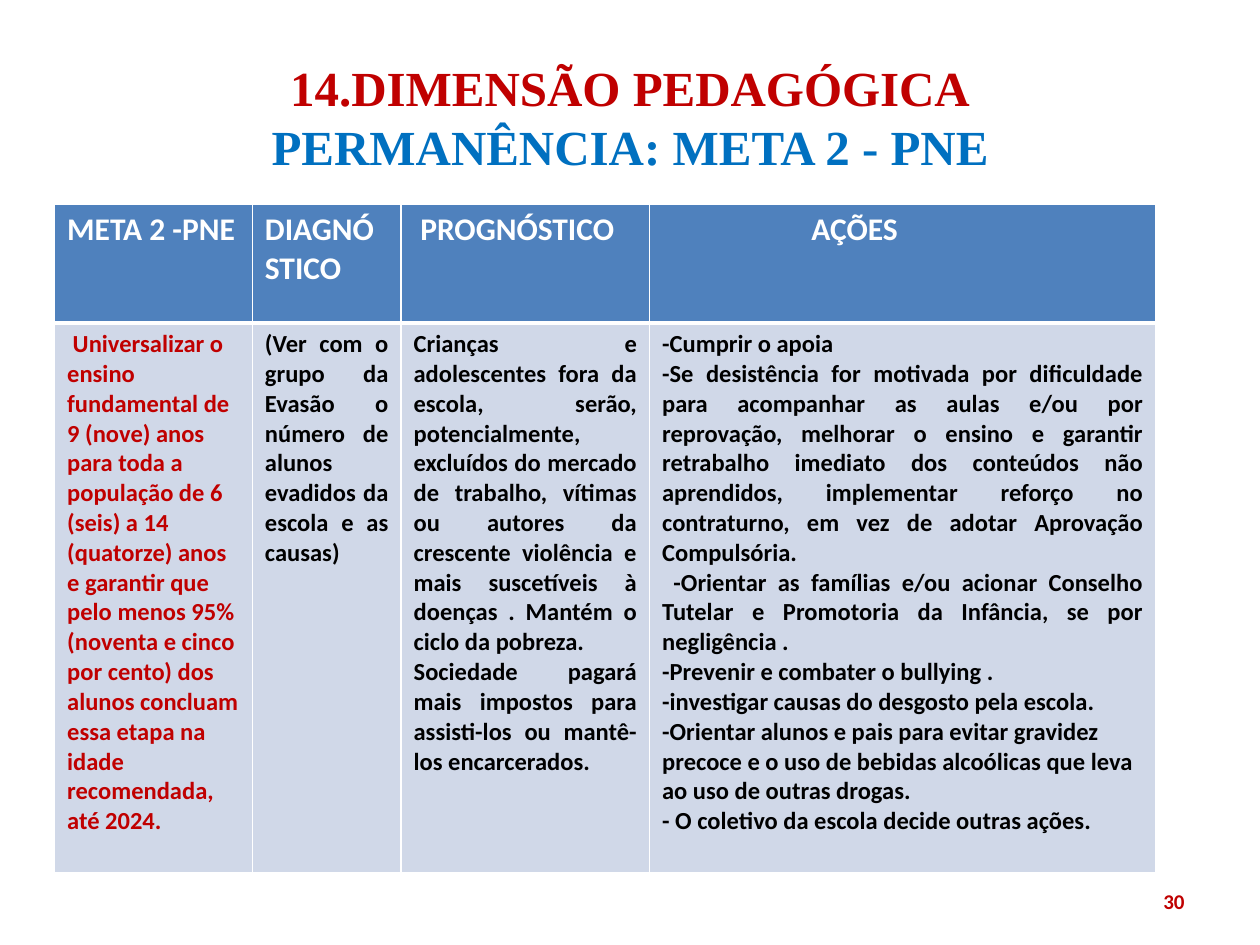
import pptx
import pptx.util
import pptx.dml.color
import pptx.enum.text
import pptx.oxml
import pptx.oxml.ns

Pt = pptx.util.Pt
ALIGN = pptx.enum.text.PP_ALIGN
ANCHOR = pptx.enum.text.MSO_ANCHOR
LEFT, JUSTIFY = ALIGN.LEFT, ALIGN.JUSTIFY

# Content
COLORS = {"red": "C00000", "blue": "0070C0", "header": "4F81BD",
          "body": "D0D8E8", "white": "FFFFFF", "black": "000000"}
TITLE = [("14.DIMENSÃO PEDAGÓGICA", "red"), ("PERMANÊNCIA: META 2 - PNE", "blue")]
PAGE_NUMBER = "30"

# Heading, column width, left margin of the heading
COLUMNS = [("META 2 -PNE", 113, 7.2), ("DIAGNÓSTICO", 85, 7.2),
           ("PROGNÓSTICO", 142, 11), ("AÇÕES", 289.3, 92.5)]
ROW_HEIGHTS = [67.7, 314]

# Each body cell: text colour, then (paragraph, alignment) pairs
BODY = [
    ("red", [(" Universalizar o ensino fundamental de 9 (nove) anos para toda a "
              "população de 6 (seis) a 14 (quatorze) anos e garantir que pelo menos "
              "95% (noventa e cinco por cento) dos alunos concluam essa etapa na "
              "idade recomendada, até 2024.", LEFT)]),
    ("black", [("(Ver com o grupo da Evasão o número de alunos evadidos da escola "
                "e as causas)", JUSTIFY)]),
    ("black", [
        ("Crianças e adolescentes fora da escola, serão, potencialmente, excluídos "
         "do mercado de trabalho, vítimas ou autores da crescente violência e mais "
         "suscetíveis à doenças . Mantém o ciclo da pobreza.", JUSTIFY),
        ("Sociedade pagará mais impostos para assisti-los ou mantê-los "
         "encarcerados.", JUSTIFY)]),
    ("black", [
        ("-Cumprir o apoia", JUSTIFY),
        ("-Se desistência for motivada por dificuldade para acompanhar as aulas "
         "e/ou por reprovação, melhorar o ensino e garantir retrabalho imediato dos "
         "conteúdos não aprendidos, implementar reforço no contraturno, em vez de "
         "adotar Aprovação Compulsória.", JUSTIFY),
        (" -Orientar as famílias e/ou acionar Conselho Tutelar e Promotoria da "
         "Infância, se por negligência .", JUSTIFY),
        ("-Prevenir e combater o bullying .", JUSTIFY),
        ("-investigar causas do desgosto pela escola.", JUSTIFY),
        ("-Orientar alunos e pais para evitar gravidez precoce e o uso de bebidas "
         "alcoólicas que leva ao uso de outras drogas.", LEFT),
        ("- O coletivo da escola decide outras ações.", LEFT)]),
]


def rgb(name):
    return pptx.dml.color.RGBColor.from_string(COLORS[name])


def format_paragraph(paragraph, size, color, align, font="Calibri"):
    paragraph.alignment = align
    for run in paragraph.runs:
        run.font.name = font
        run.font.size = Pt(size)
        run.font.bold = True
        run.font.color.rgb = rgb(color)


def add_text_frame(slide, left, top, width, height):
    frame = slide.shapes.add_textbox(Pt(left), Pt(top), Pt(width), Pt(height)).text_frame
    frame.word_wrap = True
    frame.vertical_anchor = ANCHOR.MIDDLE
    return frame


def style_cell(cell, fill, widths):
    """Fill the cell and draw white borders; widths maps side to points."""
    cell.fill.solid()
    cell.fill.fore_color.rgb = rgb(fill)
    properties = cell._tc.get_or_add_tcPr()
    for index, (side, width) in enumerate(widths.items()):
        properties.insert(index, pptx.oxml.parse_xml(
            f'<a:ln{side} {pptx.oxml.ns.nsdecls("a")} w="{Pt(width)}"><a:solidFill>'
            f'<a:srgbClr val="{COLORS["white"]}"/></a:solidFill></a:ln{side}>'))


def main():
    deck = pptx.Presentation()
    deck.slide_width, deck.slide_height = Pt(720), Pt(540)
    slide = deck.slides.add_slide(deck.slide_layouts[6])

    # Title
    title = add_text_frame(slide, 36, 21.6, 648, 90)
    title.text = "\n".join(text for text, _ in TITLE)
    for paragraph, (_, color) in zip(title.paragraphs, TITLE):
        format_paragraph(paragraph, 28, color, ALIGN.CENTER, "Times New Roman")

    # Table grid
    total_width = sum(width for _, width, _ in COLUMNS)
    table = slide.shapes.add_table(2, len(COLUMNS), Pt(31.2), Pt(116.9),
                                   Pt(total_width), Pt(sum(ROW_HEIGHTS))).table
    for row, height in zip(table.rows, ROW_HEIGHTS):
        row.height = Pt(height)

    for index, ((heading, width, margin), (color, paragraphs)) in enumerate(zip(COLUMNS, BODY)):
        table.columns[index].width = Pt(width)

        # Heading cell
        head = table.cell(0, index)
        head.text_frame.text = heading
        head.margin_left = Pt(margin)
        format_paragraph(head.text_frame.paragraphs[0], 18, "white", LEFT)
        style_cell(head, "header", {"L": 1, "R": 1, "T": 1, "B": 3})

        # Body cell
        body = table.cell(1, index)
        body.text_frame.text = "\n".join(text for text, _ in paragraphs)
        for paragraph, (_, align) in zip(body.text_frame.paragraphs, paragraphs):
            format_paragraph(paragraph, 14, color, align)
        style_cell(body, "body", {"L": 1, "R": 1, "T": 3, "B": 1})

    # Page number
    number = add_text_frame(slide, 516, 500.4, 168, 28.8)
    number.text = PAGE_NUMBER
    format_paragraph(number.paragraphs[0], 12, "red", ALIGN.RIGHT)

    deck.save("out.pptx")


if __name__ == "__main__":
    main()
